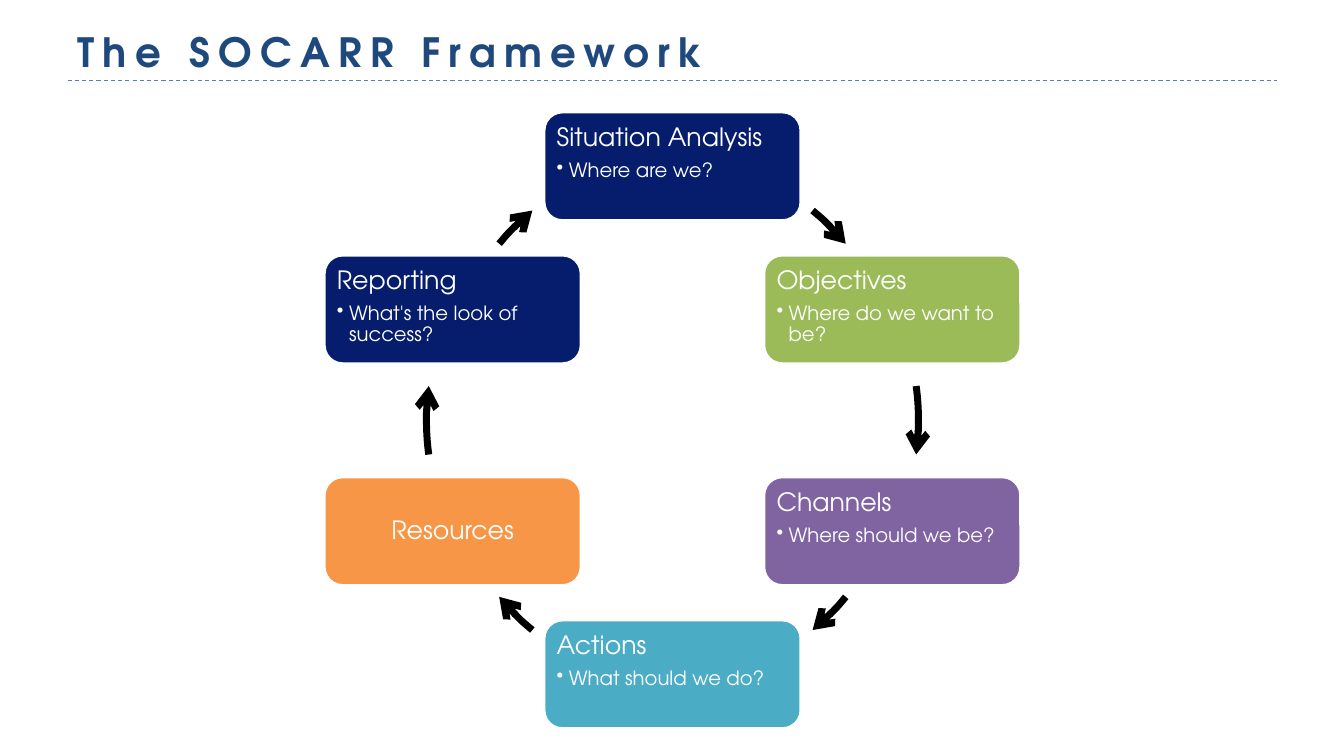
from math import cos, radians, sin

from lxml.etree import SubElement
from pptx import Presentation
from pptx.dml.color import RGBColor
from pptx.enum.dml import MSO_LINE
from pptx.enum.shapes import MSO_CONNECTOR, MSO_SHAPE
from pptx.enum.text import MSO_ANCHOR, PP_ALIGN
from pptx.oxml.ns import qn
from pptx.util import Inches, Pt

NAVY = RGBColor(0x05, 0x1D, 0x6C)
GREEN = RGBColor(0x9B, 0xBB, 0x59)
PURPLE = RGBColor(0x80, 0x64, 0xA2)
TEAL = RGBColor(0x4B, 0xAC, 0xC6)
ORANGE = RGBColor(0xF7, 0x96, 0x46)
TITLE_BLUE = RGBColor(0x1F, 0x49, 0x7D)
RULE_BLUE = RGBColor(0x4F, 0x81, 0xBD)
WHITE = RGBColor(0xFF, 0xFF, 0xFF)
BLACK = RGBColor(0, 0, 0)

CENTER_X, CENTER_Y, RADIUS = 6.67, 4.17, 2.52
SIDE_X, SIDE_Y = 2.18, 1.1
STEP_WIDTH, STEP_HEIGHT = 2.54, 1.07

# heading, question, fill, offset of the box centre from the cycle centre
STEPS = [
    ("Situation Analysis", "Where are we?", NAVY, 0, -RADIUS),
    ("Objectives", "Where do we want to be?", GREEN, SIDE_X, -SIDE_Y),
    ("Channels", "Where should we be?", PURPLE, SIDE_X, SIDE_Y),
    ("Actions", "What should we do?", TEAL, 0, RADIUS),
    ("Resources", None, ORANGE, -SIDE_X, SIDE_Y),
    ("Reporting", "What's the look of success?", NAVY, -SIDE_X, -SIDE_Y),
]
ARROW_ANGLES = [-45, 0, 45, 135, 180, 225]


class CycleSlide:
    font = "TeX Gyre Adventor"

    def __init__(self, prs):
        self.slide = prs.slides.add_slide(prs.slide_layouts[5])
        self.shapes = self.slide.shapes

    def add_run(self, paragraph, text, size, color):
        run = paragraph.add_run()
        run.text = text
        run.font.name = self.font
        run.font.size = Pt(size)
        run.font.color.rgb = color
        return run

    def title(self, text):
        title = self.shapes.title
        title.left, title.top = Inches(0.67), Inches(0.17)
        title.width, title.height = Inches(12), Inches(0.63)
        frame = title.text_frame
        frame.vertical_anchor = MSO_ANCHOR.BOTTOM
        frame.paragraphs[0].alignment = PP_ALIGN.LEFT
        run = self.add_run(frame.paragraphs[0], text, 28.8, TITLE_BLUE)
        run.font.bold = True
        run.font._element.set("spc", "600")

    def rule(self):
        rule = self.shapes.add_connector(
            MSO_CONNECTOR.STRAIGHT, Inches(0.67), Inches(0.8), Inches(12.67), Inches(0.8))
        rule.line.color.rgb = RULE_BLUE
        rule.line.width = Pt(0.75)
        rule.line.dash_style = MSO_LINE.DASH
        SubElement(rule._element.spPr, qn("a:effectLst"))

    def step(self, heading, question, fill, dx, dy):
        box = self.shapes.add_shape(
            MSO_SHAPE.ROUNDED_RECTANGLE,
            Inches(CENTER_X + dx - STEP_WIDTH / 2), Inches(CENTER_Y + dy - STEP_HEIGHT / 2),
            Inches(STEP_WIDTH), Inches(STEP_HEIGHT))
        box.shadow.inherit = False
        box.fill.solid()
        box.fill.fore_color.rgb = fill
        box.line.color.rgb = WHITE
        box.line.width = Pt(1.5)

        frame = box.text_frame
        frame.word_wrap = True
        frame.margin_left = frame.margin_right = Inches(0.07)
        frame.margin_top = frame.margin_bottom = Inches(0.07)
        frame.vertical_anchor = MSO_ANCHOR.TOP if question else MSO_ANCHOR.MIDDLE
        name = frame.paragraphs[0]
        name.alignment = PP_ALIGN.LEFT if question else PP_ALIGN.CENTER
        name.line_spacing = 0.9
        name.space_after = Pt(6.3)
        self.add_run(name, heading, 18, WHITE)
        if question:
            self.bullet(frame.add_paragraph(), question)

    def bullet(self, paragraph, text):
        paragraph.level = 1
        paragraph.alignment = PP_ALIGN.LEFT
        paragraph.line_spacing = 0.9
        props = paragraph._p.get_or_add_pPr()
        props.set("marL", str(Inches(0.12)))
        props.set("indent", str(-Inches(0.12)))
        SubElement(props, qn("a:buChar"), char="•")
        self.add_run(paragraph, text, 14, WHITE)

    def arrow(self, angle):
        """Draw a clockwise arc centred on the given angle, in degrees from the right."""
        across, down = round(cos(radians(angle)), 2), round(sin(radians(angle)), 2)
        diagonal = down != 0
        half_sweep = 5.3 if diagonal else 7.75
        shift_x = (0.22 if diagonal else 0.08) * (-1 if across > 0 else 1)
        shift_y = 0.2 * down
        arc = self.shapes.add_shape(
            MSO_SHAPE.ARC,
            Inches(CENTER_X + shift_x - RADIUS), Inches(CENTER_Y + shift_y - RADIUS),
            Inches(2 * RADIUS), Inches(2 * RADIUS))
        # arc angles count 60000 to the degree, adjustments 100000 to the unit
        arc.adjustments[0] = (angle - half_sweep) % 360 * 0.6
        arc.adjustments[1] = (angle + half_sweep) % 360 * 0.6
        arc.shadow.inherit = False
        arc.fill.background()
        arc.line.color.rgb = BLACK
        arc.line.width = Pt(5)
        SubElement(arc.line._get_or_add_ln(), qn("a:tailEnd"), type="arrow")


def main():
    prs = Presentation()
    prs.slide_width, prs.slide_height = Inches(13.33), Inches(7.5)
    cycle = CycleSlide(prs)
    cycle.rule()
    cycle.title("The SOCARR Framework")
    for step, angle in zip(STEPS, ARROW_ANGLES):
        cycle.step(*step)
        cycle.arrow(angle)
    prs.save("out.pptx")


if __name__ == "__main__":
    main()
